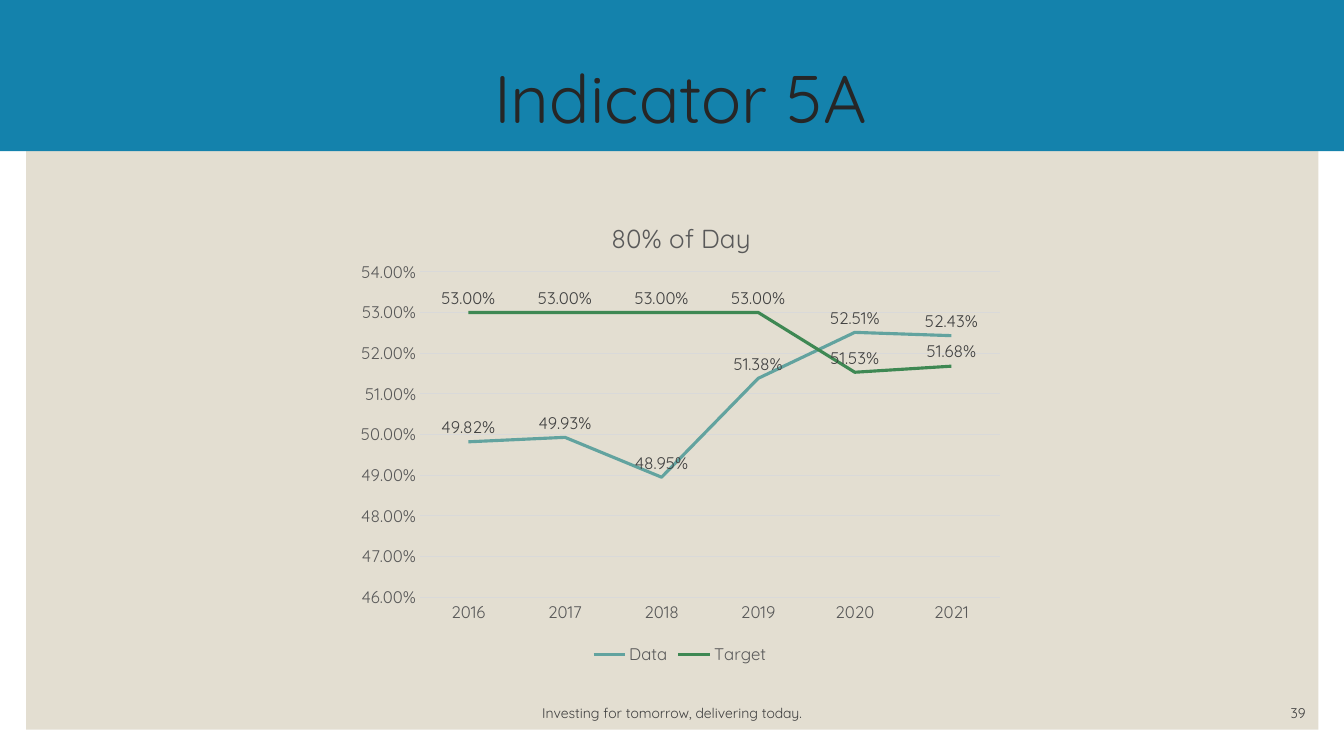
from lxml import etree
from pptx import Presentation
from pptx.chart import data
from pptx.dml import color
from pptx.enum import chart as kinds, shapes, text
from pptx.oxml import ns
from pptx.util import Pt

FACE = "Quicksand"
GREY = "595959"
DARK = "404040"
RULE = "D9D9D9"
YEARS = ["2016", "2017", "2018", "2019", "2020", "2021"]
LINES = [
    ("Data", "62A39F", [0.4982, 0.4993, 0.4895, 0.5138, 0.5251, 0.5243]),
    ("Target", "3E8853", [0.53, 0.53, 0.53, 0.53, 0.5153, 0.5168]),
]


def paint(fmt, tint):
    fmt.solid()
    fmt.fore_color.rgb = color.RGBColor.from_string(tint)


def style(font, size, tint):
    font.name = FACE
    font.size = Pt(size)
    font.bold = False
    font.color.rgb = color.RGBColor.from_string(tint)


def stroke(line, tint, width):
    paint(line.fill, tint)
    line.width = Pt(width)


def add_band(slide, box, tint):
    band = slide.shapes.add_shape(shapes.MSO_SHAPE.RECTANGLE, *map(Pt, box))
    band.shadow.inherit = False
    paint(band.fill, tint)
    band.line.fill.background()


def add_label(slide, box, words, size, tint, align, anchor):
    frame = slide.shapes.add_textbox(*map(Pt, box)).text_frame
    frame.word_wrap = True
    frame.vertical_anchor = anchor
    frame.text = words
    para = frame.paragraphs[0]
    para.alignment = align
    style(para.runs[0].font, size, tint)
    return para


def place(node, index, **parts):
    for old in node.findall(ns.qn("c:layout")):
        node.remove(old)
    layout = etree.Element(ns.qn("c:layout"))
    manual = etree.SubElement(layout, ns.qn("c:manualLayout"))
    for tag, val in parts.items():
        etree.SubElement(manual, ns.qn("c:" + tag)).set("val", str(val))
    node.insert(index, layout)


def set_axes(chart):
    cat, val = chart.category_axis, chart.value_axis
    for axis in (cat, val):
        axis.major_tick_mark = kinds.XL_TICK_MARK.NONE
        axis.minor_tick_mark = kinds.XL_TICK_MARK.NONE
        style(axis.tick_labels.font, 12, GREY)
    stroke(cat.format.line, RULE, 0.75)
    val.format.line.fill.background()
    val.has_major_gridlines = True
    stroke(val.major_gridlines.format.line, RULE, 0.75)
    val.minimum_scale, val.maximum_scale, val.major_unit = 0.46, 0.54, 0.01
    val.tick_labels.number_format = "0.00%"
    val.tick_labels.number_format_is_linked = False


def set_line(line, tint):
    line.smooth = False
    line.marker.style = kinds.XL_MARKER_STYLE.NONE
    stroke(line.format.line, tint, 2.25)
    tags = line.data_labels
    tags.show_value = True
    tags.position = kinds.XL_LABEL_POSITION.ABOVE
    tags.number_format = "0.00%"
    tags.number_format_is_linked = False
    style(tags.font, 12, DARK)


def add_trend(slide, box):
    info = data.CategoryChartData(number_format="0.00%")
    info.categories = YEARS
    for name, _, vals in LINES:
        info.add_series(name, vals)
    chart = slide.shapes.add_chart(
        kinds.XL_CHART_TYPE.LINE, *map(Pt, box), info).chart
    style(chart.font, 10, "000000")
    chart.has_title = True
    head = chart.chart_title
    head.include_in_layout = False
    head.text_frame.text = "80% of Day"
    style(head.text_frame.paragraphs[0].runs[0].font, 18.6, GREY)
    chart.has_legend = True
    chart.legend.position = kinds.XL_LEGEND_POSITION.BOTTOM
    chart.legend.include_in_layout = False
    style(chart.legend.font, 12, GREY)
    set_axes(chart)
    plot = chart.plots[0]
    plot.vary_by_categories = False
    for line, (_, tint, _) in zip(plot.series, LINES):
        set_line(line, tint)
    root = chart.element
    place(root.find(".//" + ns.qn("c:title")), 1,
          xMode="edge", yMode="edge", x=0.39, y=0.05)
    place(root.find(".//" + ns.qn("c:plotArea")), 0,
          layoutTarget="inner", xMode="edge", yMode="edge",
          x=0.11, y=0.17, w=0.87, h=0.68)


def main():
    deck = Presentation()
    deck.slide_width, deck.slide_height = Pt(960), Pt(540)
    slide = deck.slides.add_slide(deck.slide_layouts[6])
    align, anchor = text.PP_ALIGN, text.MSO_ANCHOR
    add_band(slide, (18.7, 18.7, 923, 502.5), "E3DED1")
    add_band(slide, (0, 0, 960, 108), "1482AC")
    title = add_label(slide, (90, 18.7, 792, 108), "Indicator 5A", 48,
                      "262626", align.CENTER, anchor.MIDDLE)
    title.line_spacing = 0.9
    add_trend(slide, (247.7, 136, 476, 342))
    add_label(slide, (275, 497, 410, 21.6),
              "Investing for tomorrow, delivering today.", 10, DARK,
              align.CENTER, anchor.BOTTOM)
    add_label(slide, (824.4, 497, 115.2, 21.6), "39", 10, DARK,
              align.RIGHT, anchor.BOTTOM)
    deck.save("out.pptx")


if __name__ == "__main__":
    main()
